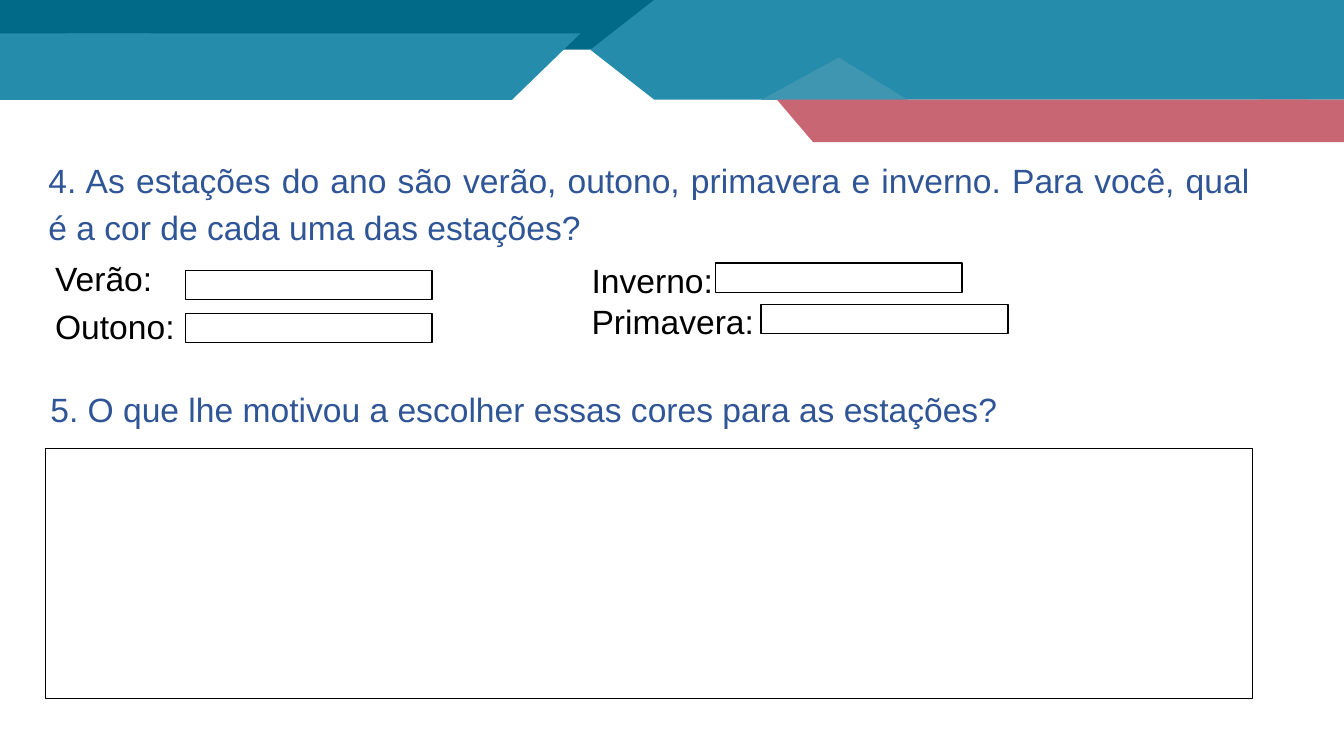
from pptx import Presentation, util as u
from pptx.dml.color import RGBColor
from pptx.enum import shapes, text

HEX = {"dark": "006A88", "teal": "258DAB", "pale": "3F96B0", "rose": "C86673",
       "white": "FFFFFF", "black": "000000", "blue": "2F5597"}
KIND = shapes.MSO_SHAPE
LEFT, JUST = text.PP_ALIGN.LEFT, text.PP_ALIGN.JUSTIFY

# Header: kind, left, top, width, height (cm), colour, adjustment, flipped
BANDS = [
    (KIND.PARALLELOGRAM, 0, 0, 18.29, 1.25, "dark", 1.03, False),
    (KIND.RECTANGLE, 0, 0, 3.78, 1.25, "dark", None, False),
    (KIND.PARALLELOGRAM, 0, 0.84, 14.63, 1.68, "teal", 1.03, False),
    (KIND.RECTANGLE, 0, 0.84, 3.78, 1.68, "teal", None, False),
    (KIND.PENTAGON, 14.88, 0, 18.99, 2.51, "teal", 0.64, True),
    (KIND.ISOSCELES_TRIANGLE, 19.18, 1.45, 3.7, 1.07, "pale", 0.53, False),
    (KIND.PARALLELOGRAM, 19.58, 2.51, 14.29, 1.07, "rose", 0.85, True),
    (KIND.RECTANGLE, 31.75, 2.51, 2.12, 1.07, "rose", None, False),
]

# Texts: left, top, width, height (cm), colour, align, line spacing, gap (pt), lines
TEXTS = [
    (0.97, 3.76, 30.78, 2.54, "blue", JUST, 1.15, 0,
     ["4. As estações do ano são verão, outono, primavera e inverno. "
      "Para você, qual é a cor de cada uma das estações?"]),
    (1.14, 6.38, 8.43, 2.4, "black", LEFT, 1, 5, ["Verão:", "Outono:"]),
    (14.66, 6.43, 16.94, 2.31, "black", LEFT, 1, 0, ["Inverno:", "Primavera:"]),
    (1.02, 9.53, 30.78, 1.37, "blue", JUST, 1.15, 0,
     ["5. O que lhe motivou a escolher essas cores para as estações?"]),
]

# Answer boxes: left, top of the short fields, then the large one
FIELD = (6.22, 0.74)
FIELDS = [(4.67, 6.81), (4.67, 7.9), (18.03, 6.63), (19.18, 7.67)]
ANSWER = (1.14, 11.3, 30.43, 6.3)


def rgb(name):
    return RGBColor.from_string(HEX[name])


def draw(kind, area, fill, edge=None):
    shape = slide.shapes.add_shape(kind, *map(u.Cm, area))
    shape.shadow.inherit = False
    shape.fill.solid()
    shape.fill.fore_color.rgb = rgb(fill)
    if edge:
        shape.line.color.rgb = rgb(edge)
        shape.line.width = u.Pt(1)
    else:
        shape.line.fill.background()
    return shape


def write(area, color, align, pitch, gap, lines):
    frame = slide.shapes.add_textbox(*map(u.Cm, area)).text_frame
    frame.word_wrap = True
    frame.text = "\n".join(lines)
    for i, par in enumerate(frame.paragraphs):
        par.alignment = align
        par.line_spacing = pitch
        par.space_before = u.Pt(gap if i else 0)
        par.font.name = "Arial"
        par.font.size = u.Pt(24)
        par.font.color.rgb = rgb(color)


deck = Presentation()
deck.slide_width, deck.slide_height = u.Cm(33.87), u.Cm(19.05)
slide = deck.slides.add_slide(deck.slide_layouts[6])

# Header bands
for kind, *area, fill, adj, flip in BANDS:
    band = draw(kind, area, fill)
    if adj is not None:
        band.adjustments[0] = adj
    if flip:
        band._element.spPr.xfrm.set("flipH", "1")

# Questions and labels
for left, top, wide, high, *style in TEXTS:
    write((left, top, wide, high), *style)

# Answer boxes
for area in [spot + FIELD for spot in FIELDS] + [ANSWER]:
    draw(KIND.RECTANGLE, area, "white", "black")

deck.save("out.pptx")
